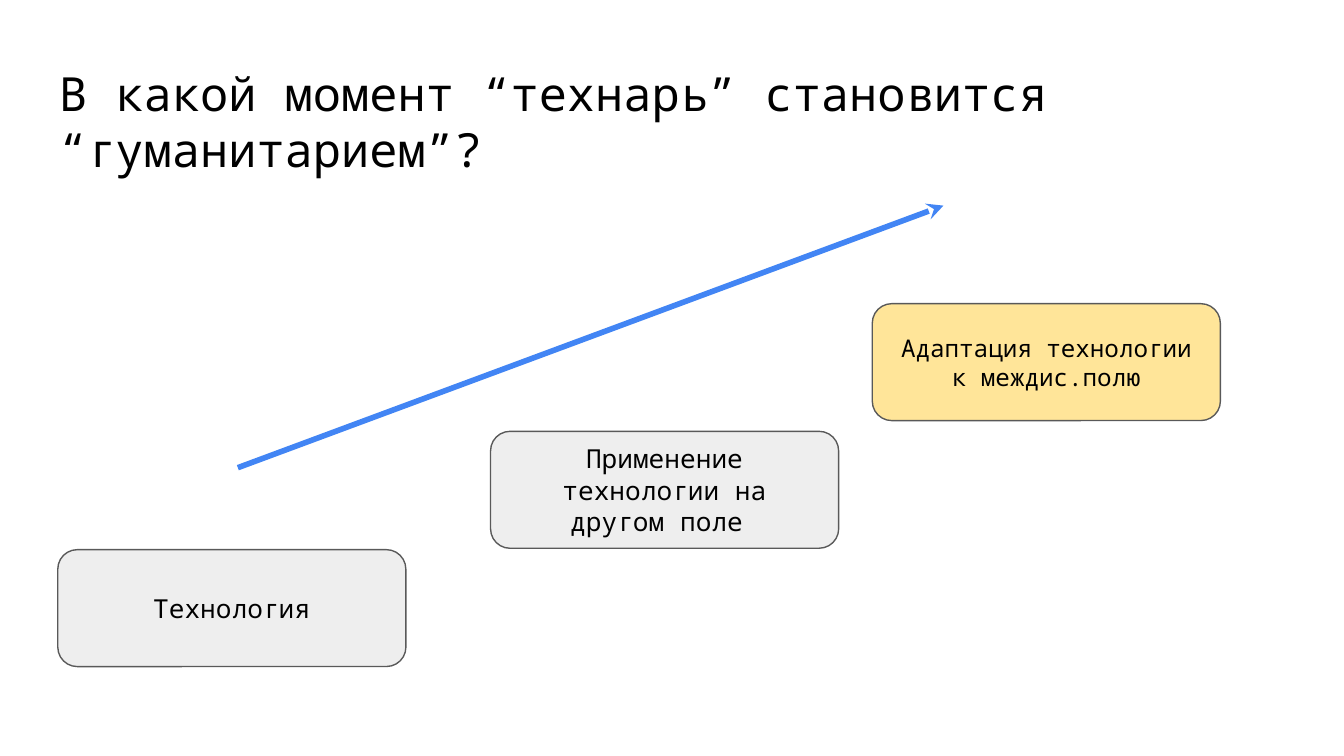
from dataclasses import dataclass

from lxml import etree
from pptx import Presentation
from pptx.dml.color import RGBColor
from pptx.enum.shapes import MSO_CONNECTOR, MSO_SHAPE
from pptx.enum.text import MSO_ANCHOR, PP_ALIGN
from pptx.oxml.ns import qn
from pptx.slide import Slide
from pptx.text.text import TextFrame
from pptx.util import Inches, Pt

ROUNDED = MSO_SHAPE.ROUNDED_RECTANGLE
STRAIGHT = MSO_CONNECTOR.STRAIGHT
TOP, MIDDLE = MSO_ANCHOR.TOP, MSO_ANCHOR.MIDDLE
LEFT, CENTER = PP_ALIGN.LEFT, PP_ALIGN.CENTER

BLACK = RGBColor(0x00, 0x00, 0x00)
GREY = RGBColor(0xEE, 0xEE, 0xEE)
YELLOW = RGBColor(0xFF, 0xE5, 0x99)
OUTLINE = RGBColor(0x59, 0x59, 0x59)
BLUE = RGBColor(0x42, 0x85, 0xF4)

FONT = "Noto Sans Mono"
SLIDE_WIDTH = Inches(10)
SLIDE_HEIGHT = SLIDE_WIDTH * 9 // 16
STAGE_WIDTH, STAGE_HEIGHT = 2.59, 0.87


@dataclass(frozen=True)
class Stage:
    text: str
    left: float
    top: float
    size: float = 14
    fill: RGBColor = GREY


STAGES = [
    Stage("Технология", 0.43, 4.09),
    Stage("Применение технологии на другом поле ", 3.65, 3.21),
    Stage("Адаптация технологии к междис.полю", 6.49, 2.26, 13, YELLOW),
]


def write_text(frame: TextFrame, text: str, size: float,
               anchor: MSO_ANCHOR, alignment: PP_ALIGN) -> None:
    frame.word_wrap = True
    frame.vertical_anchor = anchor
    frame.margin_left = frame.margin_right = Inches(0.1)
    frame.margin_top = frame.margin_bottom = Inches(0.1)
    paragraph = frame.paragraphs[0]
    paragraph.text = text
    paragraph.alignment = alignment
    paragraph.font.name = FONT
    paragraph.font.size = Pt(size)
    paragraph.font.color.rgb = BLACK


def add_title(slide: Slide, text: str) -> None:
    box = slide.shapes.add_textbox(Inches(0.34), Inches(0.38), Inches(9.32), Inches(0.63))
    write_text(box.text_frame, text, 25.2, TOP, LEFT)


def add_stage(slide: Slide, stage: Stage) -> None:
    shape = slide.shapes.add_shape(ROUNDED, Inches(stage.left), Inches(stage.top),
                                   Inches(STAGE_WIDTH), Inches(STAGE_HEIGHT))
    shape.shadow.inherit = False
    shape.fill.solid()
    shape.fill.fore_color.rgb = stage.fill
    shape.line.color.rgb = OUTLINE
    shape.line.width = Pt(0.75)
    write_text(shape.text_frame, stage.text, stage.size, MIDDLE, CENTER)


def add_growth_arrow(slide: Slide) -> None:
    arrow = slide.shapes.add_connector(STRAIGHT, Inches(1.77), Inches(3.48),
                                       Inches(7.02), Inches(1.53))
    arrow.line.color.rgb = BLUE
    arrow.line.width = Pt(3)
    properties = arrow.element.spPr
    etree.SubElement(properties.find(qn("a:ln")), qn("a:tailEnd"), type="stealth")
    etree.SubElement(properties, qn("a:effectLst"))


def main() -> None:
    presentation = Presentation()
    presentation.slide_width = SLIDE_WIDTH
    presentation.slide_height = SLIDE_HEIGHT
    slide = presentation.slides.add_slide(presentation.slide_layouts[6])
    add_title(slide, "В какой момент “технарь” становится “гуманитарием”?")
    for stage in STAGES:
        add_stage(slide, stage)
    add_growth_arrow(slide)
    presentation.save("out.pptx")


if __name__ == "__main__":
    main()
